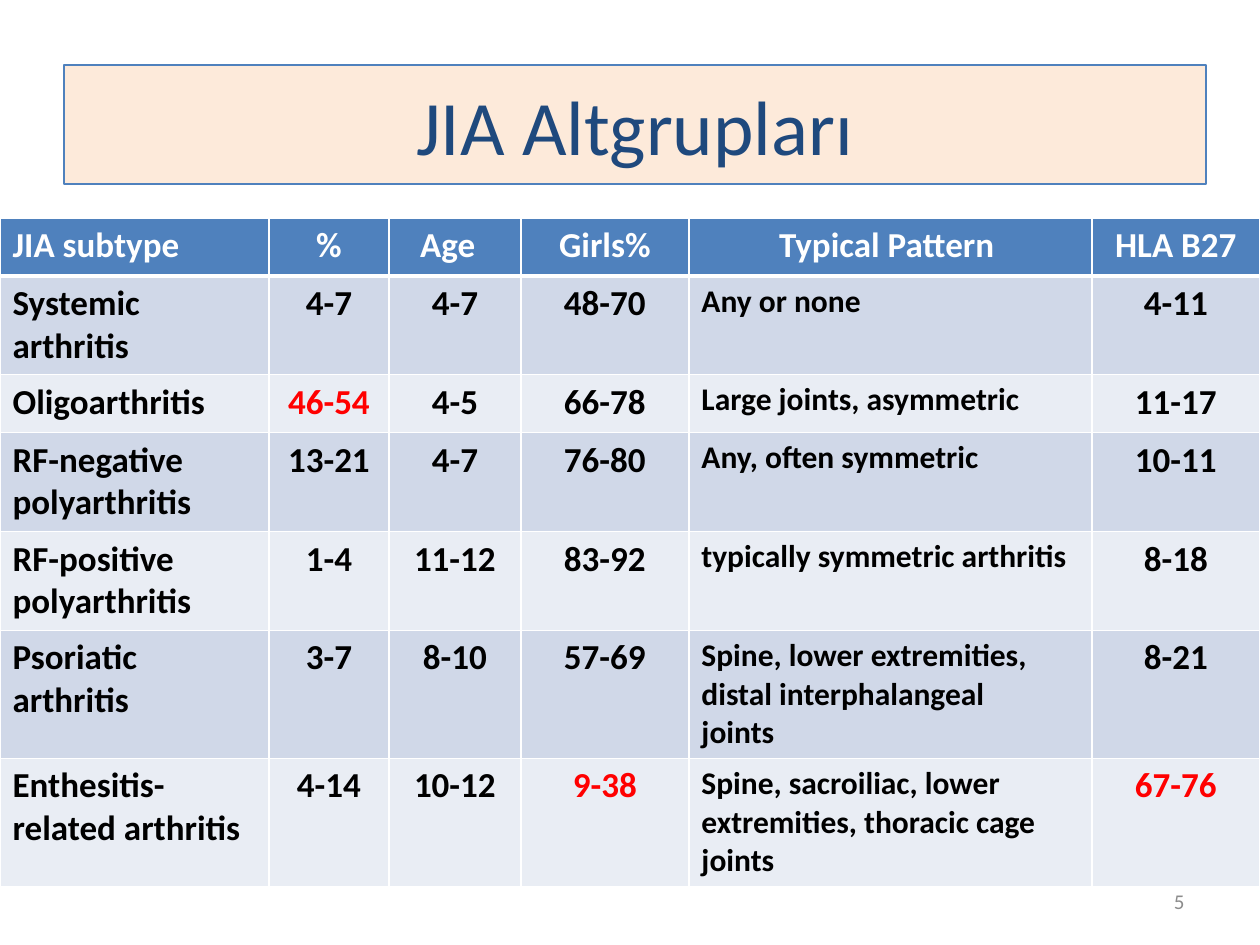
from dataclasses import dataclass

from lxml import etree
from pptx import Presentation, util as u
from pptx.dml.color import RGBColor
from pptx.enum import text
from pptx.oxml import ns

EMU_PER_PX = 914400 / 126


def px(length):
    return u.Emu(round(length * EMU_PER_PX))


@dataclass(frozen=True)
class Theme:
    font: str = "Calibri"
    title: str = "1F497D"
    title_fill: str = "FDEADA"
    accent: str = "4F81BD"
    white: str = "FFFFFF"
    black: str = "000000"
    highlight: str = "FF0000"
    muted: str = "8C8C8C"
    bands: tuple = ("E9EDF4", "D0D8E8")
    title_size: int = 44
    table_size: int = 20
    pattern_size: int = 18
    number_size: int = 12


HEADER = ["JIA subtype", "%", "Age", "Girls%", "Typical Pattern", "HLA B27"]
SUBTYPES = [
    ["Systemic arthritis", "4-7", "4-7", "48-70", "Any or none", "4-11"],
    ["Oligoarthritis", "46-54", "4-5", "66-78", "Large joints, asymmetric", "11-17"],
    ["RF-negative polyarthritis", "13-21", "4-7", "76-80", "Any, often symmetric", "10-11"],
    ["RF-positive polyarthritis", "1-4", "11-12", "83-92",
     "typically symmetric arthritis", "8-18"],
    ["Psoriatic arthritis", "3-7", "8-10", "57-69",
     "Spine, lower extremities, distal interphalangeal\njoints", "8-21"],
    ["Enthesitis-related arthritis", "4-14", "10-12", "9-38",
     "Spine, sacroiliac, lower extremities, thoracic cage\njoints", "67-76"],
]
HIGHLIGHTED = {"46-54", "9-38", "67-76"}
COLUMN_WIDTHS = [269, 120, 132, 168, 403, 168]
ROW_HEIGHTS = [58, 98, 58, 99, 99, 128, 127]
SUBTYPE_COLUMN, AGE_COLUMN, PATTERN_COLUMN = 0, 2, 4
HEADER_RIGHT_MARGINS = {AGE_COLUMN: 27, PATTERN_COLUMN: 20}


class SlideBuilder:
    def __init__(self, slide, theme):
        self.slide = slide
        self.theme = theme

    def style(self, frame, size, color, align, bold=False):
        for paragraph in frame.paragraphs:
            paragraph.alignment = align
            font = paragraph.font
            font.name, font.size, font.bold = self.theme.font, u.Pt(size), bold
            font.color.rgb = RGBColor.from_string(color)

    def title(self, words, left, top, width, height):
        shape = self.slide.shapes.title
        shape.left, shape.top, shape.width, shape.height = map(px, (left, top, width, height))
        shape.fill.solid()
        shape.fill.fore_color.rgb = RGBColor.from_string(self.theme.title_fill)
        shape.line.color.rgb = RGBColor.from_string(self.theme.accent)
        shape.line.width = u.Pt(0.75)
        shape.text_frame.text = words
        shape.text_frame.vertical_anchor = text.MSO_ANCHOR.MIDDLE
        self.style(shape.text_frame, self.theme.title_size, self.theme.title,
                   text.PP_ALIGN.CENTER)

    def borders(self, cell, bottom):
        properties = cell._tc.get_or_add_tcPr()
        widths = {"lnL": 1, "lnR": 1, "lnT": 1, "lnB": bottom}
        for position, (side, width) in enumerate(widths.items()):
            line = etree.Element(ns.qn(f"a:{side}"), w=str(u.Pt(width)))
            fill = etree.SubElement(line, ns.qn("a:solidFill"))
            etree.SubElement(fill, ns.qn("a:srgbClr"), val=self.theme.white)
            properties.insert(position, line)

    def cell(self, cell, words, row, column):
        theme = self.theme
        is_header = row == 0
        is_pattern = column == PATTERN_COLUMN and not is_header
        cell.text = words
        cell.fill.solid()
        fill = theme.accent if is_header else theme.bands[row % 2]
        cell.fill.fore_color.rgb = RGBColor.from_string(fill)
        self.borders(cell, bottom=3 if is_header else 1)
        if is_header and column in HEADER_RIGHT_MARGINS:
            cell.margin_right = px(HEADER_RIGHT_MARGINS[column])

        if is_header:
            color = theme.white
        else:
            color = theme.highlight if words in HIGHLIGHTED else theme.black
        size = theme.pattern_size if is_pattern else theme.table_size
        is_left = column == SUBTYPE_COLUMN or is_pattern
        align = text.PP_ALIGN.LEFT if is_left else text.PP_ALIGN.CENTER
        self.style(cell.text_frame, size, color, align, bold=True)

    def table(self, rows, left, top):
        frame = self.slide.shapes.add_table(
            len(rows), len(COLUMN_WIDTHS), px(left), px(top),
            px(sum(COLUMN_WIDTHS)), px(sum(ROW_HEIGHTS)))
        table = frame.table
        for column, width in zip(table.columns, COLUMN_WIDTHS):
            column.width = px(width)
        for row, height in zip(table.rows, ROW_HEIGHTS):
            row.height = px(height)
        for row, values in enumerate(rows):
            for column, words in enumerate(values):
                self.cell(table.cell(row, column), words, row, column)

    def page_number(self, number, left, top, width, height):
        shape = self.slide.shapes.add_textbox(*map(px, (left, top, width, height)))
        frame = shape.text_frame
        frame.word_wrap = True
        frame.vertical_anchor = text.MSO_ANCHOR.MIDDLE
        frame.text = number
        self.style(frame, self.theme.number_size, self.theme.muted, text.PP_ALIGN.RIGHT)


def main():
    presentation = Presentation()
    presentation.slide_width, presentation.slide_height = px(1260), px(945)
    slide = presentation.slides.add_slide(presentation.slide_layouts[5])
    builder = SlideBuilder(slide, Theme())

    # Title banner
    builder.title("JIA Altgrupları", 64, 65, 1142, 119)

    # Subtype table
    builder.table([HEADER] + SUBTYPES, 0, 218)

    # Page number
    builder.page_number("5", 903, 876, 294, 50)

    presentation.save("out.pptx")


if __name__ == "__main__":
    main()
